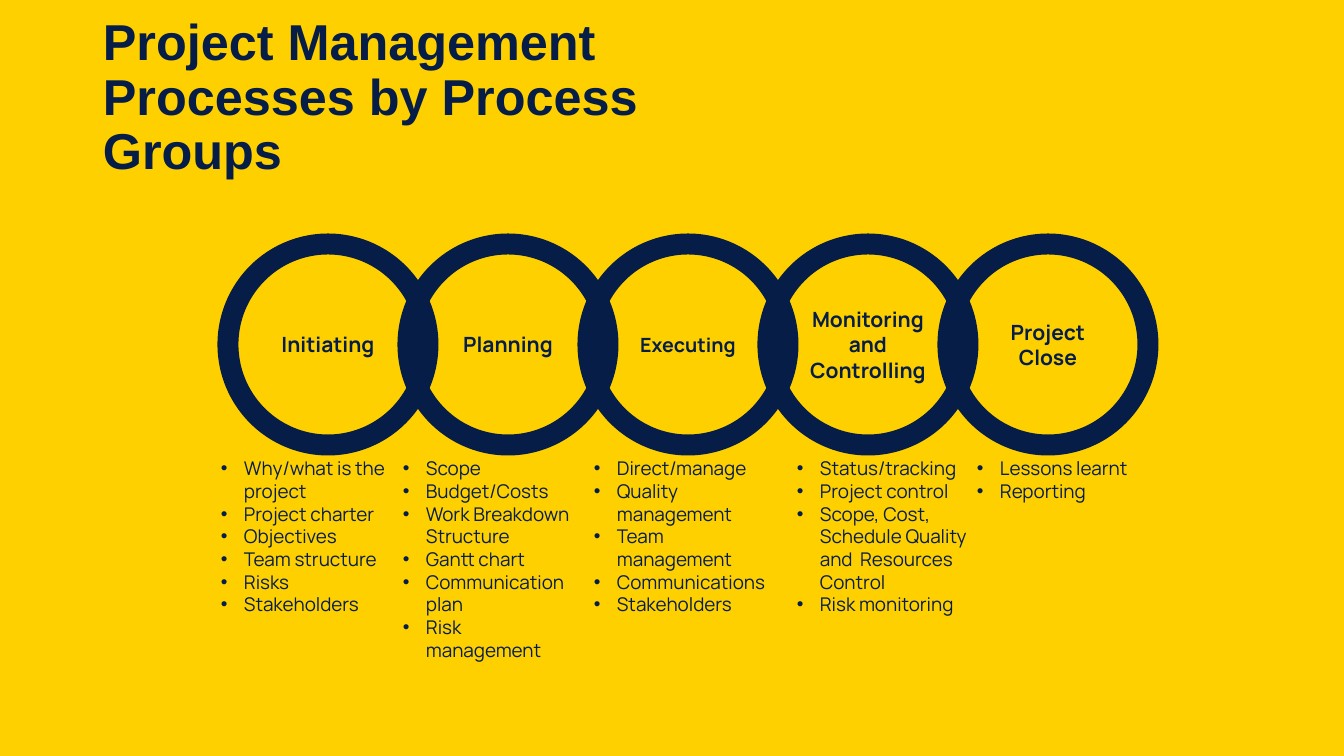
import pptx
import pptx.dml.color
import pptx.enum.shapes
import pptx.enum.text
import pptx.oxml
import pptx.oxml.ns
import pptx.util

PX = 914400 / 100.8
NAVY = "061D48"
YELLOW = "FFD000"


def color(value):
    return pptx.dml.color.RGBColor.from_string(value)


def add_text(para, text, size, face, bold=False):
    span = para.add_run()
    span.text = text
    span.font.size = pptx.util.Pt(size)
    span.font.name = face
    span.font.bold = bold
    span.font.color.rgb = color(NAVY)


deck = pptx.Presentation()
deck.slide_width = round(1344 * PX)
deck.slide_height = round(756 * PX)
page = deck.slides.add_slide(deck.slide_layouts[6])
page.background.fill.solid()
page.background.fill.fore_color.rgb = color(YELLOW)

# Title
title = page.shapes.add_textbox(*[round(n * PX) for n in (93, 44, 740, 110)])
title.text_frame.word_wrap = True
title.text_frame.vertical_anchor = pptx.enum.text.MSO_ANCHOR.MIDDLE
heading = title.text_frame.paragraphs[0]
heading.line_spacing = 0.9
add_text(heading, "Project Management Processes by Process Groups", 36, "Arial", True)

# Process groups: name, name size, list left, list width, list height, items
groups = [
    ("Initiating", 15, 211, 193, 170,
     ["Why/what is the project", "Project charter", "Objectives",
      "Team structure", "Risks", "Stakeholders"]),
    ("Planning", 15, 393, 193, 239,
     ["Scope", "Budget/Costs", "Work Breakdown Structure", "Gantt chart",
      "Communication plan", "Risk management"]),
    ("Executing", 14, 584, 200, 170,
     ["Direct/manage", "Quality management", "Team management",
      "Communications", "Stakeholders"]),
    ("Monitoring and Controlling", 15, 787, 193, 194,
     ["Status/tracking", "Project control",
      "Scope, Cost, Schedule Quality and  Resources Control",
      "Risk monitoring"]),
    ("Project Close", 15, 967, 179, 56, ["Lessons learnt", "Reporting"]),
]

# Chain of overlapping rings
for index, (name, size, *_) in enumerate(groups):
    ring = page.shapes.add_shape(
        pptx.enum.shapes.MSO_SHAPE.OVAL,
        *[round(n * PX) for n in (228 + 180 * index, 244, 200, 201)])
    ring.shadow.inherit = False
    ring.fill.background()
    ring.line.color.rgb = color(NAVY)
    ring.line.width = pptx.util.Pt(15)
    ring.text_frame.word_wrap = True
    ring.text_frame.vertical_anchor = pptx.enum.text.MSO_ANCHOR.MIDDLE
    label = ring.text_frame.paragraphs[0]
    label.alignment = pptx.enum.text.PP_ALIGN.CENTER
    add_text(label, name, size, "Manrope", True)

# Bulleted list under each ring
for name, size, left, width, height, items in groups:
    box = page.shapes.add_textbox(
        *[round(n * PX) for n in (left, 452, width, height)])
    frame = box.text_frame
    frame.word_wrap = True
    frame.auto_size = pptx.enum.text.MSO_AUTO_SIZE.SHAPE_TO_FIT_TEXT
    for row, item in enumerate(items):
        para = frame.add_paragraph() if row else frame.paragraphs[0]
        settings = para._p.get_or_add_pPr()
        settings.set("marL", str(round(23 * PX)))
        settings.set("indent", str(round(-23 * PX)))
        for tag, key, value in (("a:buFont", "typeface", "Arial"),
                                ("a:buChar", "char", "•")):
            bullet = pptx.oxml.xmlchemy.OxmlElement(tag)
            bullet.set(key, value)
            settings.append(bullet)
        add_text(para, item, 13.5, "Manrope")

deck.save("out.pptx")
